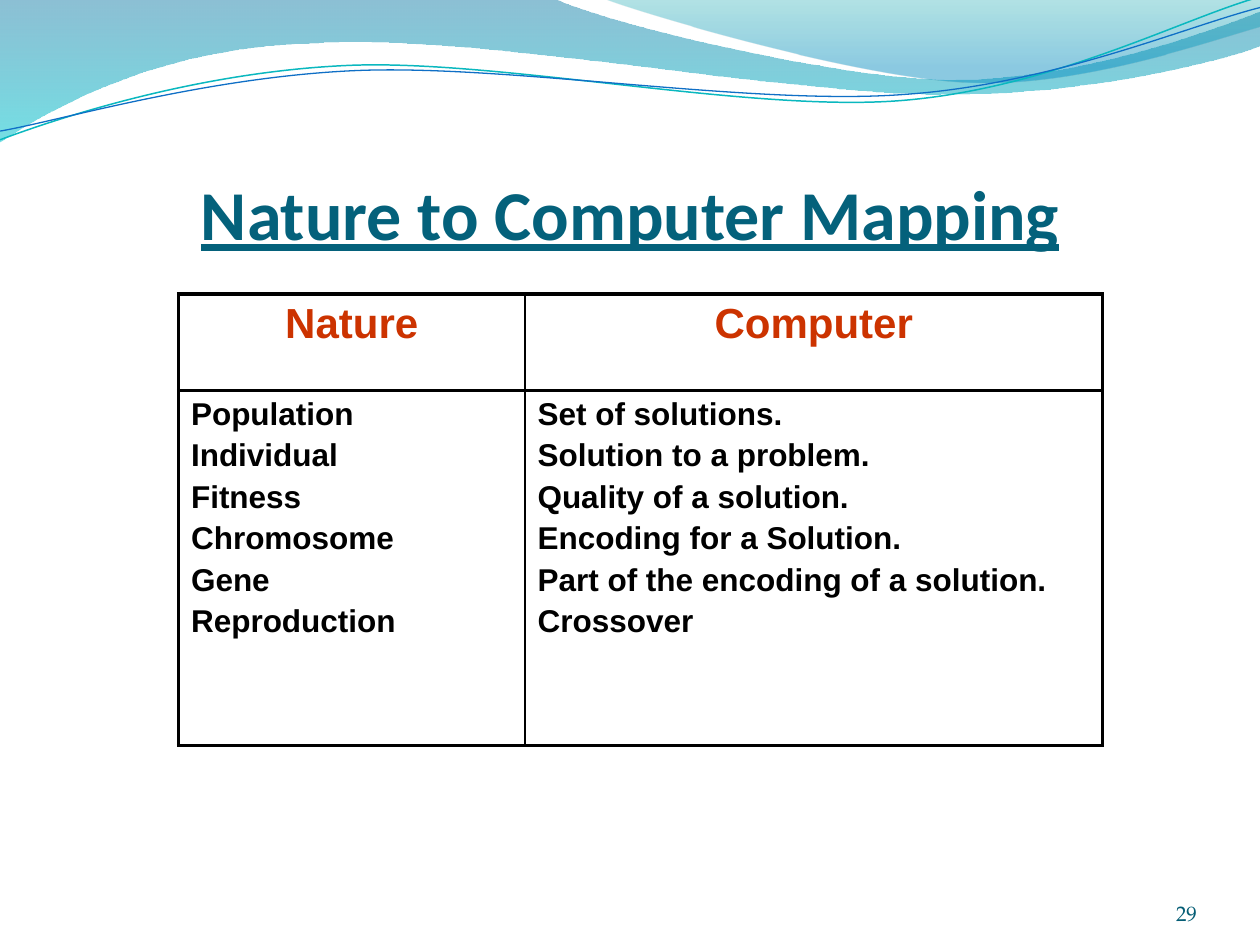
from lxml.etree import SubElement
from pptx import Presentation
from pptx.dml.color import RGBColor
from pptx.enum.text import MSO_ANCHOR as Anchor, MSO_AUTO_SIZE as AutoSize, PP_ALIGN as Align
from pptx.oxml import parse_xml
from pptx.oxml.ns import nsdecls, qn
from pptx.util import Pt

BLACK = RGBColor(0x00, 0x00, 0x00)
TITLE_TEAL = RGBColor(0x04, 0x61, 0x7B)
NUMBER_TEAL = RGBColor(0x04, 0x5D, 0x75)
HEADER_RED = RGBColor(0xCC, 0x33, 0x00)
WAVE_BLUE = RGBColor(0x00, 0x74, 0xA1)
WAVE_CYAN = RGBColor(0x00, 0xC6, 0xCF)
CREST_TEAL = RGBColor(0x00, 0xA1, 0xA9)
CREST_BLUE = RGBColor(0x00, 0x8B, 0xBF)
LINE_TEAL = RGBColor(0x0A, 0xB8, 0xBF)
LINE_BLUE = RGBColor(0x0F, 0x6F, 0xC6)

TITLE = "Nature to Computer Mapping"
PAGE_NUMBER = "29"
HEADERS = ["Nature", "Computer"]
MAPPING = [
    ("Population", "Set of solutions."),
    ("Individual", "Solution to a problem."),
    ("Fitness", "Quality of a solution."),
    ("Chromosome", "Encoding for a Solution."),
    ("Gene", "Part of the encoding of a solution."),
    ("Reproduction", "Crossover"),
]
COLUMN_WIDTHS = [198, 330]
ROW_HEIGHTS = [55, 203]
OUTER, INNER = 2.25, 1

# Each outline starts at a point; two numbers draw a line, six draw a Bézier curve.
BANDS = [
    ([(0, 0), (316.8, -0.7), (342.7, 12.2, 478.1, 45.4, 545.8, 45.4),
      (614.2, 45.4, 689.8, 18.7, 720, 6.5), (720.7, 25.9),
      (707.8, 31.7, 626.4, 54.7, 537.1, 54), (447.8, 54, 275, 20.2, 185, 24.5),
      (92.9, 25.9, 33.1, 59.8, -0.7, 81.4)],
     [(0, WAVE_BLUE, 45), (1, WAVE_CYAN, 55)]),
    ([(344.9, -0.7), (366.5, 7.9, 491, 44.6, 553.7, 46.8),
      (616.3, 49.7, 691.9, 23, 720, 15.1), (720, 0)],
     [(0, CREST_TEAL, 30), (0.8, CREST_BLUE, 45)]),
]
STROKES = [
    ([(0, 79.9), (34.6, 67, 113.8, 41, 199.4, 37.4),
      (284.4, 33.8, 427, 64.1, 513.4, 57.6), (599.8, 51.1, 675.4, 10.8, 718.6, -1.4)],
     LINE_TEAL, 0.85),
    ([(0, 74.9), (33.8, 69.1, 118.1, 43.9, 203.8, 40.3),
      (290.2, 36.7, 429.8, 60.5, 516.2, 54), (601.9, 48.2, 677.5, 15.1, 720, 4.3)],
     LINE_BLUE, 0.75),
]


def add_outline(slide, outline, close):
    ends = [(Pt(segment[-2]), Pt(segment[-1])) for segment in outline]
    builder = slide.shapes.build_freeform(*ends[0])
    builder.add_line_segments(ends[1:], close=close)
    shape = builder.convert_to_shape()
    shape.shadow.inherit = False
    lines = list(shape._element.iter(qn("a:lnTo")))
    for line, segment in zip(lines, outline[1:]):
        if len(segment) == 6:
            line.tag = qn("a:cubicBezTo")
            for index in (0, 1):
                x, y = segment[2 * index:2 * index + 2]
                point = SubElement(line, qn("a:pt"), x=str(Pt(x) - shape.left),
                                   y=str(Pt(y) - shape.top))
                line.insert(index, point)
    return shape


def add_band(slide, outline, stops):
    shape = add_outline(slide, outline, True)
    shape.line.fill.background()
    shape.fill.gradient()
    shape.fill.gradient_angle = 270
    for stop, (position, color, _) in zip(shape.fill.gradient_stops, stops):
        stop.position = position
        stop.color.rgb = color
    colors = shape._element.spPr.iter(qn("a:srgbClr"))
    for element, (_, _, opacity) in zip(colors, stops):
        SubElement(element, qn("a:alpha"), val=str(opacity * 1000))


def add_stroke(slide, outline, color, width):
    shape = add_outline(slide, outline, False)
    shape.fill.background()
    shape.line.color.rgb = color
    shape.line.width = Pt(width)


def write(frame, lines, size, color, font="Arial", bold=True, underline=False,
          align=Align.LEFT, before=0):
    for index, text in enumerate(lines):
        paragraph = frame.add_paragraph() if index else frame.paragraphs[0]
        paragraph.alignment = align
        paragraph.space_before = Pt(before)
        run = paragraph.add_run()
        run.text = text
        run.font.name, run.font.size = font, Pt(size)
        run.font.bold, run.font.underline = bold, underline
        run.font.color.rgb = color


def set_frame(frame, top=0):
    frame.word_wrap = True
    frame.auto_size = AutoSize.NONE
    frame.vertical_anchor = Anchor.BOTTOM
    frame.margin_left = frame.margin_right = frame.margin_bottom = 0
    frame.margin_top = Pt(top)


def set_borders(cell, **widths):
    properties = cell._tc.get_or_add_tcPr()
    for index, side in enumerate("LRTB"):
        properties.insert(index, parse_xml(
            f'<a:ln{side} {nsdecls("a")} w="{Pt(widths[side])}"><a:solidFill>'
            f'<a:srgbClr val="{BLACK}"/></a:solidFill></a:ln{side}>'))


def add_mapping_table(slide):
    table = slide.shapes.add_table(2, 2, Pt(102), Pt(168), Pt(sum(COLUMN_WIDTHS)),
                                   Pt(sum(ROW_HEIGHTS))).table
    table.first_row = table.horz_banding = False
    for row, height in zip(table.rows, ROW_HEIGHTS):
        row.height = Pt(height)
    for index, (header, entries) in enumerate(zip(HEADERS, zip(*MAPPING))):
        table.columns[index].width = Pt(COLUMN_WIDTHS[index])
        top, body = table.cell(0, index), table.cell(1, index)
        write(top.text_frame, [header], 24, HEADER_RED, align=Align.CENTER, before=4.8)
        write(body.text_frame, entries, 18, BLACK, before=3.6)
        for cell in (top, body):
            cell.fill.background()
            set_borders(cell, L=INNER if index else OUTER, R=OUTER if index else INNER,
                        T=OUTER, B=OUTER)


def main():
    presentation = Presentation()
    presentation.slide_width, presentation.slide_height = Pt(720), Pt(540)
    slide = presentation.slides.add_slide(presentation.slide_layouts[5])
    for outline, stops in BANDS:
        add_band(slide, outline, stops)
    for outline, color, width in STROKES:
        add_stroke(slide, outline, color, width)

    title = slide.shapes.title
    title.left, title.top, title.width, title.height = Pt(36), Pt(55.5), Pt(648), Pt(90)
    set_frame(title.text_frame, top=3.6)
    write(title.text_frame, [TITLE], 40, TITLE_TEAL, font="Calibri", underline=True,
          align=Align.CENTER)

    number = slide.shapes.add_textbox(Pt(624), Pt(500), Pt(60), Pt(28.8))
    set_frame(number.text_frame)
    write(number.text_frame, [PAGE_NUMBER], 12, NUMBER_TEAL, font="TeX Gyre Pagella",
          bold=False, align=Align.RIGHT)
    add_mapping_table(slide)
    presentation.save("out.pptx")


if __name__ == "__main__":
    main()
